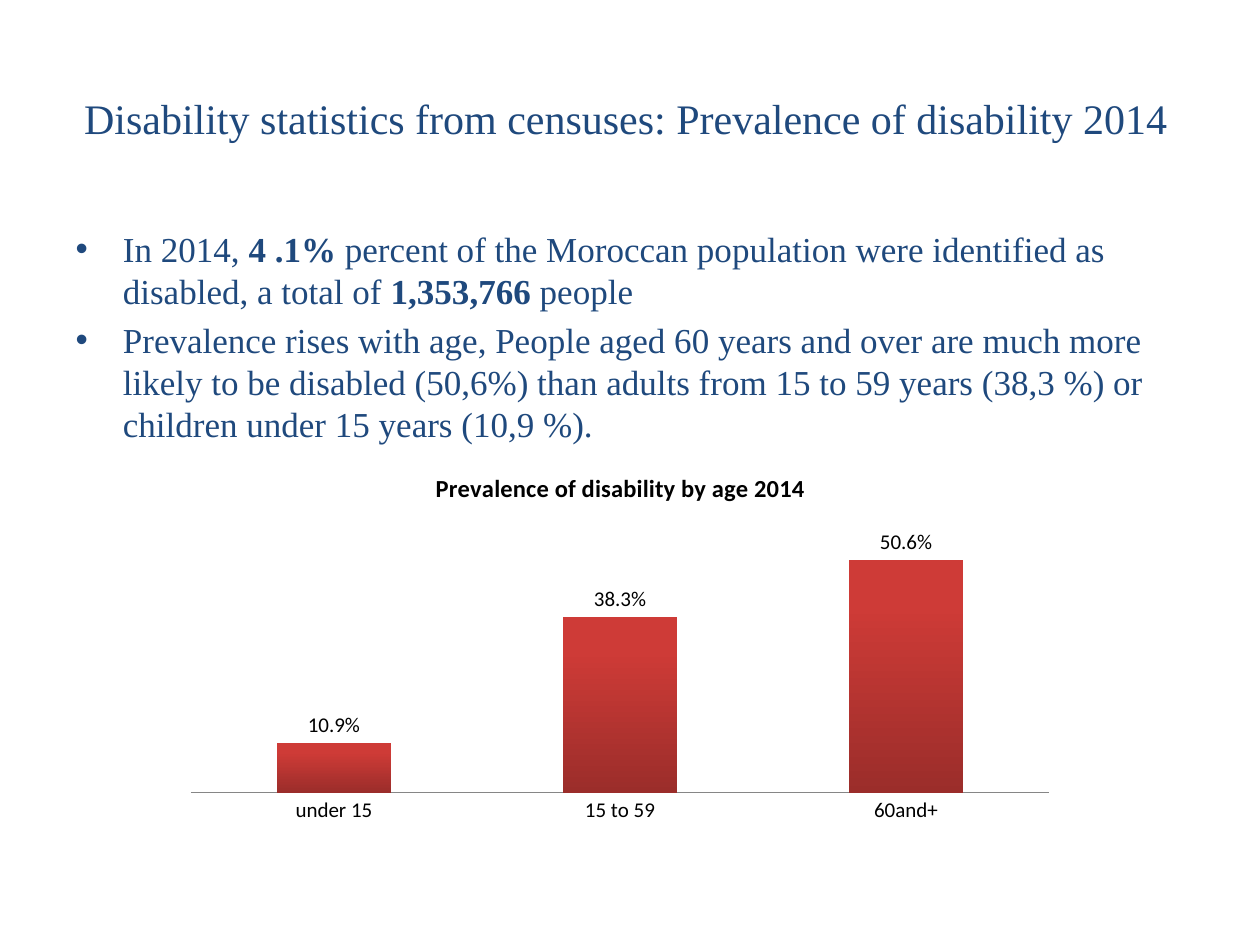
from pptx import Presentation, util as u
from pptx.chart.data import CategoryChartData
from pptx.dml.color import RGBColor
from pptx.enum import chart as ch, text
from pptx.oxml import parse_xml
from pptx.oxml.ns import nsdecls

PX = u.Inches(1) // 126
NAVY = RGBColor(0x1F, 0x49, 0x7D)
BLACK = RGBColor(0, 0, 0)
GREY = RGBColor(0x86, 0x86, 0x86)
BAR_STOPS = [(0, RGBColor(0x9B, 0x2D, 0x2A)), (0.8, RGBColor(0xCE, 0x3B, 0x37))]
SERIF, SANS = "Times New Roman", "Calibri"

TITLE = "Disability statistics from censuses: Prevalence of disability 2014"
BULLETS = [
    [("In 2014, ", False), ("4 .1%", True),
     (" percent of the Moroccan population were identified as disabled, a total of", False),
     (" 1,353,766 ", True), ("people", False)],
    [("Prevalence rises with age, People aged 60 years and over are much more likely "
      "to be disabled (50,6%) than adults from 15 to 59 years (38,3 %) or children "
      "under 15 years (10,9 %).", False)],
]
CHART_TITLE = "Prevalence of disability by age 2014"
PREVALENCE = {"under 15": 0.109, "15 to 59": 0.383, "60and+": 0.506}

TITLE_BOX = (59, 39, 1134, 158)
BODY_BOX = (63, 221, 1134, 624)
CHART_BOX = (174, 452, 893, 378)
PLOT_BOX = (17, 65, 858, 276)


def place(sp, box):
    sp.left, sp.top, sp.width, sp.height = (v * PX for v in box)


def style(font, color, **values):
    font.color.rgb = color
    for name, value in values.items():
        setattr(font, name, value)


def add_runs(p, runs, size):
    for words, bold in runs:
        r = p.add_run()
        r.text = words
        style(r.font, NAVY, name=SERIF, size=u.Pt(size), bold=bold)


def add_prevalence_chart(s):
    data = CategoryChartData(number_format="0.0%")
    data.categories = list(PREVALENCE)
    data.add_series("Series 1", list(PREVALENCE.values()))
    box = [v * PX for v in CHART_BOX]
    chart = s.shapes.add_chart(ch.XL_CHART_TYPE.COLUMN_CLUSTERED, *box, data).chart
    style(chart.font, BLACK, name=SANS, size=u.Pt(12))
    chart.has_legend = False

    tf = chart.chart_title.text_frame
    tf.text = CHART_TITLE
    style(tf.paragraphs[0].runs[0].font, BLACK, name=SANS, size=u.Pt(14), bold=True)
    chart.chart_title.include_in_layout = False

    axis = chart.category_axis
    axis.major_tick_mark = ch.XL_TICK_MARK.NONE
    axis.format.line.color.rgb = GREY
    axis.format.line.width = u.Pt(0.75)
    values = chart.value_axis
    values.visible = values.has_major_gridlines = False
    values.minimum_scale, values.maximum_scale = 0, 0.6

    plot = chart.plots[0]
    plot.gap_width, plot.vary_by_categories = 150, False
    plot.has_data_labels = True
    for name, value in dict(show_value=True, number_format="0.0%",
                            number_format_is_linked=False,
                            position=ch.XL_LABEL_POSITION.OUTSIDE_END).items():
        setattr(plot.data_labels, name, value)
    style(plot.data_labels.font, BLACK, name=SANS, size=u.Pt(12))

    fill = plot.series[0].format.fill
    fill.gradient()
    fill.gradient_angle = 90
    for stop, (position, color) in zip(fill.gradient_stops, BAR_STOPS):
        stop.position, stop.color.rgb = position, color

    sizes = CHART_BOX[2:] * 2
    parts = "".join(f'<c:{tag} val="{v / size:.3f}"/>'
                    for tag, v, size in zip("xywh", PLOT_BOX, sizes))
    layout = parse_xml(
        f'<c:layout {nsdecls("c")}><c:manualLayout><c:layoutTarget val="inner"/>'
        f'<c:xMode val="edge"/><c:yMode val="edge"/>{parts}</c:manualLayout></c:layout>')
    area = plot._element.getparent()
    for old in area.findall(layout.tag):
        area.remove(old)
    area.insert(0, layout)


def main():
    prs = Presentation()
    prs.slide_width, prs.slide_height = u.Inches(10), u.Inches(7.5)
    s = prs.slides.add_slide(prs.slide_layouts.get_by_name("Title and Content"))

    title, body = s.placeholders
    place(title, TITLE_BOX)
    title.text_frame.vertical_anchor = text.MSO_ANCHOR.MIDDLE
    add_runs(title.text_frame.paragraphs[0], [(TITLE, False)], 24)

    place(body, BODY_BOX)
    tf = body.text_frame
    for i, runs in enumerate(BULLETS):
        add_runs(tf.add_paragraph() if i else tf.paragraphs[0], runs, 20)

    add_prevalence_chart(s)
    prs.save("out.pptx")


if __name__ == "__main__":
    main()
